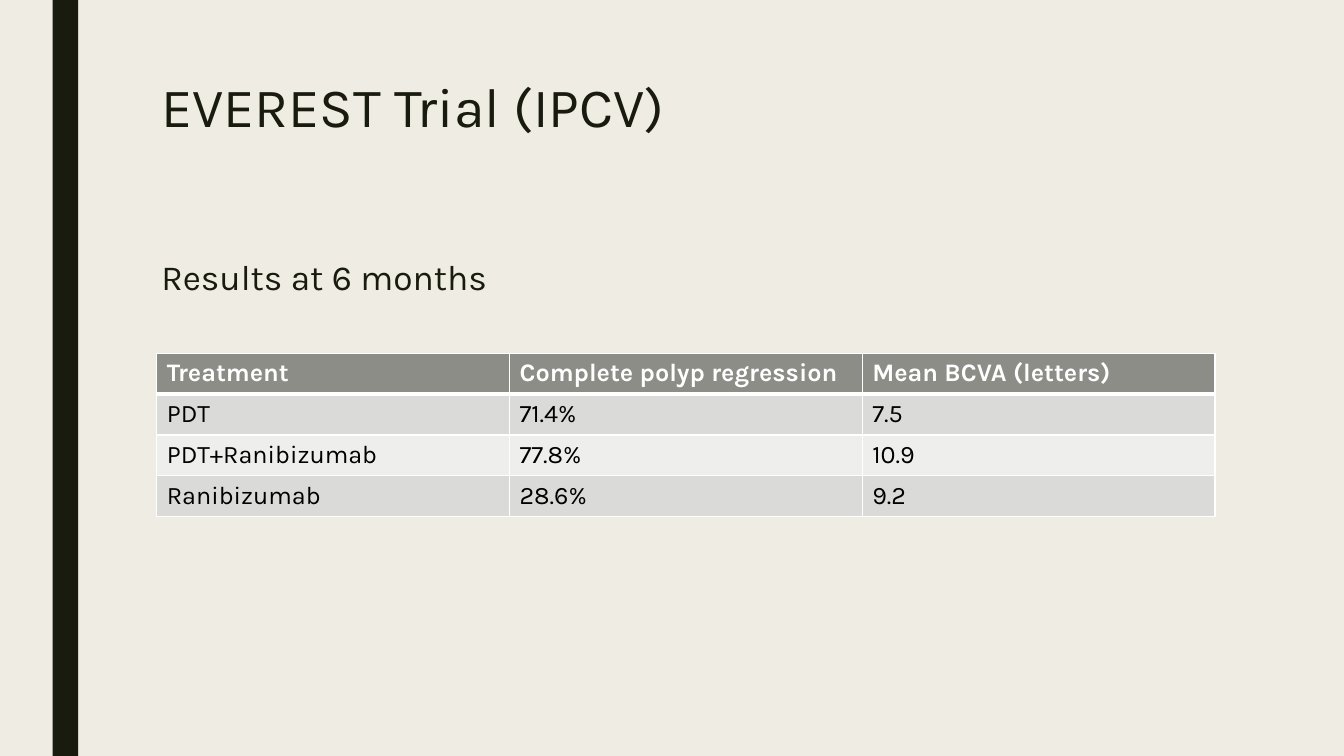
"""Build the EVEREST trial results slide."""
from lxml import etree
from pptx import Presentation
from pptx.dml.color import RGBColor
from pptx.enum.shapes import MSO_SHAPE
from pptx.enum.text import MSO_ANCHOR, MSO_AUTO_SIZE, PP_ALIGN
from pptx.oxml.ns import qn
from pptx.util import Cm, Pt

RECT = MSO_SHAPE.RECTANGLE
TOP = MSO_ANCHOR.TOP
LEFT = PP_ALIGN.LEFT
NO_FIT = MSO_AUTO_SIZE.NONE
FONT = "Karla"
INK, PAPER, WHITE, BLACK = "191B0E", "EFEDE3", "FFFFFF", "000000"
HEADER, BANDS = "8C8D86", ("EEEEED", "DADBD9")


def paint(fill, color):
    fill.solid()
    fill.fore_color.rgb = RGBColor.from_string(color)


def style(p, size, color, bold=False):
    p.alignment = LEFT
    for r in p.runs:
        r.font.name = FONT
        r.font.size = Pt(size)
        r.font.bold = bold
        paint(r.font.fill, color)


prs = Presentation()
prs.slide_width, prs.slide_height = Cm(33.87), Cm(19.05)
s = prs.slides.add_slide(prs.slide_layouts[5])
paint(s.background.fill, PAPER)

bar = s.shapes.add_shape(RECT, Cm(1.33), 0, Cm(0.64), prs.slide_height)
bar.shadow.inherit = False
paint(bar.fill, INK)
bar.line.fill.background()

title = s.shapes.title
title.left, title.top, title.width, title.height = Cm(3.81), Cm(1.9), Cm(26.67), Cm(4.11)
tf = title.text_frame
tf.word_wrap = True
tf.auto_size = NO_FIT
tf.vertical_anchor = TOP
tf.text = "EVEREST Trial (IPCV)\nResults at 6 months"
for p, size, gap in zip(tf.paragraphs, (39.6, 25.2), (0, 86)):
    style(p, size, INK)
    p.line_spacing = 0.89
    p.space_before = Pt(gap)

rows = [
    ("Treatment", "Complete polyp regression", "Mean BCVA (letters)"),
    ("PDT", "71.4%", "7.5"),
    ("PDT+Ranibizumab", "77.8%", "10.9"),
    ("Ranibizumab", "28.6%", "9.2"),
]
table = s.shapes.add_table(4, 3, Cm(3.95), Cm(8.9), Cm(26.67), Cm(4.12)).table
for i, row in enumerate(rows):
    table.rows[i].height = Cm(1.03)
    for j, text in enumerate(row):
        cell = table.cell(i, j)
        cell.text = text
        style(cell.text_frame.paragraphs[0], 18, BLACK if i else WHITE, i == 0)
        tcPr = cell._tc.get_or_add_tcPr()
        for side in "LRTB":
            thick = (i, side) in ((0, "B"), (1, "T"))
            ln = etree.SubElement(tcPr, qn(f"a:ln{side}"), w=str(Pt(3 if thick else 1)))
            fill = etree.SubElement(ln, qn("a:solidFill"))
            etree.SubElement(fill, qn("a:srgbClr"), val=WHITE)
        paint(cell.fill, BANDS[i % 2] if i else HEADER)

prs.save("out.pptx")
